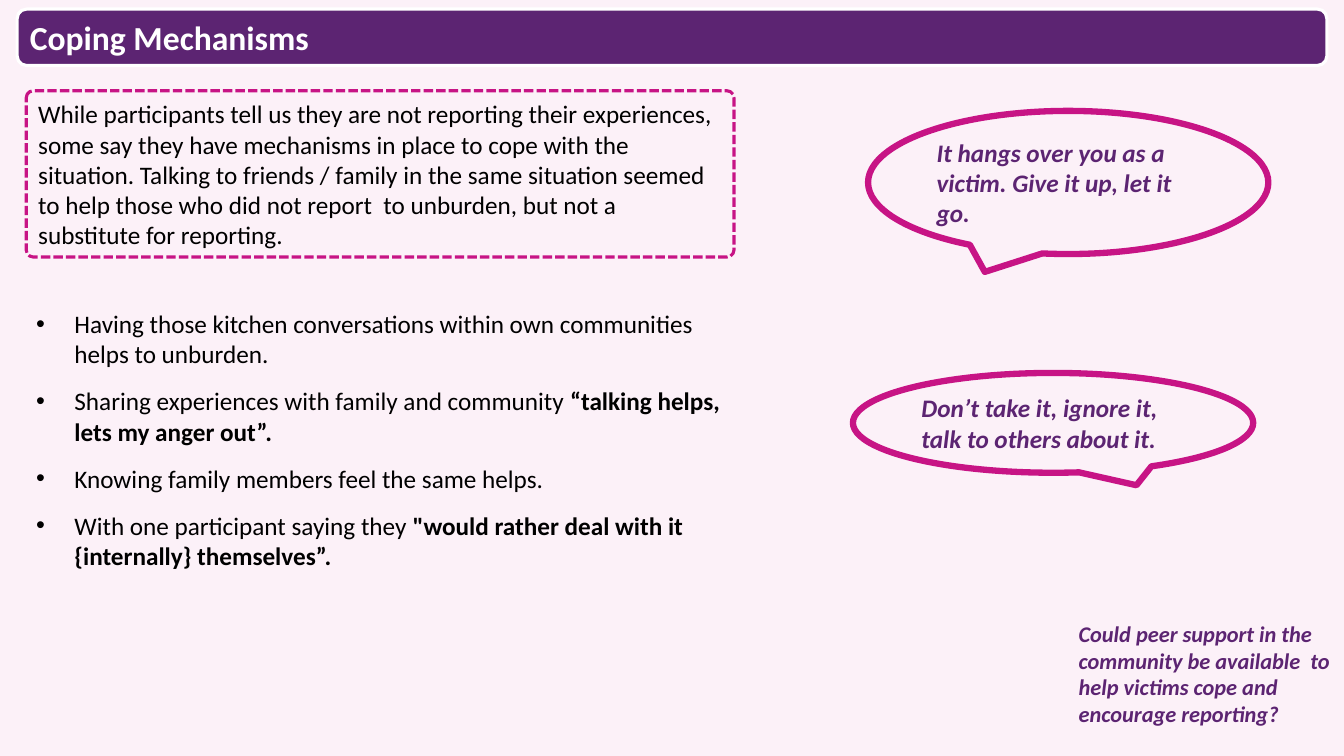
"""Build the Coping Mechanisms slide."""
from dataclasses import dataclass

from lxml.etree import SubElement
from pptx import Presentation
from pptx.dml.color import RGBColor
from pptx.enum.dml import MSO_LINE
from pptx.enum.shapes import MSO_SHAPE as Preset
from pptx.enum.text import MSO_ANCHOR as Anchor, MSO_AUTO_SIZE as AutoSize, PP_ALIGN as Align
from pptx.oxml.ns import qn
from pptx.util import Inches, Pt


@dataclass(frozen=True)
class Theme:
    font: str = "Calibri"
    purple: RGBColor = RGBColor(0x5C, 0x24, 0x72)
    pink: RGBColor = RGBColor(0xC7, 0x14, 0x85)
    blush: RGBColor = RGBColor(0xFC, 0xF1, 0xF8)
    white: RGBColor = RGBColor(0xFF, 0xFF, 0xFF)
    black: RGBColor = RGBColor(0, 0, 0)
    title_size: int = 24
    body_size: int = 18
    question_size: int = 16
    border: float = 2.25
    callout_border: float = 4.5


THEME = Theme()

SUMMARY = (
    "While participants tell us they are not reporting their experiences, some say they have "
    "mechanisms in place to cope with the situation. Talking to friends / family in the same "
    "situation seemed to help those who did not report  to unburden, but not a substitute "
    "for reporting."
)
BULLETS = [
    ("Having those kitchen conversations within own communities helps to unburden.", ""),
    ("Sharing experiences with family and community ", "“talking helps, lets my anger out”."),
    ("Knowing family members feel the same helps.", ""),
    ("With one participant saying they ", '"would rather deal with it {internally} themselves”.'),
]
QUESTION = (
    "Could peer support in the community be available  to help victims cope and "
    "encourage reporting?"
)


def add_span(para, text, size, color, bold=False, italic=False):
    """Append one styled run to a paragraph."""
    span = para.add_run()
    span.text = text
    span.font.name = THEME.font
    span.font.size = Pt(size)
    span.font.color.rgb = color
    span.font.bold = bold
    span.font.italic = italic


def prepare_frame(box, anchor):
    """Make a box wrap and grow with its text, and return its text frame."""
    frame = box.text_frame
    frame.word_wrap = True
    frame.auto_size = AutoSize.SHAPE_TO_FIT_TEXT
    frame.vertical_anchor = anchor
    frame.paragraphs[0].alignment = Align.LEFT
    return frame


def add_panel(page, preset, place, line_color, line_width, anchor=Anchor.MIDDLE):
    """Draw an unfilled outlined shape and return it with its first paragraph."""
    panel = page.shapes.add_shape(preset, *map(Inches, place))
    panel.shadow.inherit = False
    panel.fill.background()
    panel.line.color.rgb = line_color
    panel.line.width = Pt(line_width)
    return panel, prepare_frame(panel, anchor).paragraphs[0]


def add_title(page, text, place):
    """Draw the title bar."""
    bar, para = add_panel(page, Preset.ROUNDED_RECTANGLE, place, THEME.white, THEME.border)
    bar.fill.solid()
    bar.fill.fore_color.rgb = THEME.purple
    add_span(para, text, THEME.title_size, THEME.white, bold=True)


def add_summary(page, text, place):
    """Draw the dashed summary panel."""
    panel, para = add_panel(
        page, Preset.ROUNDED_RECTANGLE, place, THEME.pink, THEME.border, Anchor.BOTTOM
    )
    panel.adjustments[0] = 0.043
    panel.line.dash_style = MSO_LINE.SQUARE_DOT
    add_span(para, text, THEME.body_size, THEME.black)


def add_quote(page, text, place, mirrored=False):
    """Draw a speech bubble, with its tail on the right when mirrored."""
    bubble, para = add_panel(page, Preset.OVAL_CALLOUT, place, THEME.pink, THEME.callout_border)
    if mirrored:
        bubble._element.spPr.get_or_add_xfrm().set("flipH", "1")
    add_span(para, text, THEME.body_size, THEME.purple, bold=True, italic=True)


def format_bullet(para):
    """Give a paragraph its bullet, hanging indent and spacing."""
    para.space_before = para.space_after = Pt(6)
    properties = para._p.get_or_add_pPr()
    properties.set("marL", str(Inches(0.38)))
    properties.set("indent", str(-Inches(0.38)))
    SubElement(properties, qn("a:buFont"), typeface="Arial")
    SubElement(properties, qn("a:buChar"), char="•")


def add_bullets(page, items, place):
    """Write the bullet list, each item a plain part and a bold part."""
    box = page.shapes.add_textbox(*map(Inches, place))
    frame = prepare_frame(box, Anchor.TOP)
    for index, (plain, strong) in enumerate(items):
        para = frame.add_paragraph() if index else frame.paragraphs[0]
        format_bullet(para)
        add_span(para, plain, THEME.body_size, THEME.black)
        if strong:
            add_span(para, strong, THEME.body_size, THEME.black, bold=True)


def add_question(page, text, place):
    """Write the closing question."""
    box = page.shapes.add_textbox(*map(Inches, place))
    para = prepare_frame(box, Anchor.TOP).paragraphs[0]
    add_span(para, text, THEME.question_size, THEME.purple, bold=True, italic=True)


def main():
    """Build and save the deck."""
    deck = Presentation()
    deck.slide_width, deck.slide_height = Inches(13.33), Inches(7.5)
    page = deck.slides.add_slide(deck.slide_layouts[6])
    page.background.fill.solid()
    page.background.fill.fore_color.rgb = THEME.blush

    add_title(page, "Coping Mechanisms", (0.17, 0.09, 12.99, 0.56))
    add_bullets(page, BULLETS, (0.26, 3.01, 7.02, 2.73))
    add_summary(page, SUMMARY, (0.26, 0.9, 7.02, 1.65))
    add_quote(
        page, "It hangs over you as a victim. Give it up, let it go.", (8.61, 1.1, 3.97, 1.42)
    )
    add_question(page, QUESTION, (10.6, 6.1, 2.73, 1.18))
    add_quote(
        page,
        "Don’t take it, ignore it, talk to others about it.",
        (8.46, 3.7, 3.97, 0.99),
        mirrored=True,
    )
    deck.save("out.pptx")


if __name__ == "__main__":
    main()
